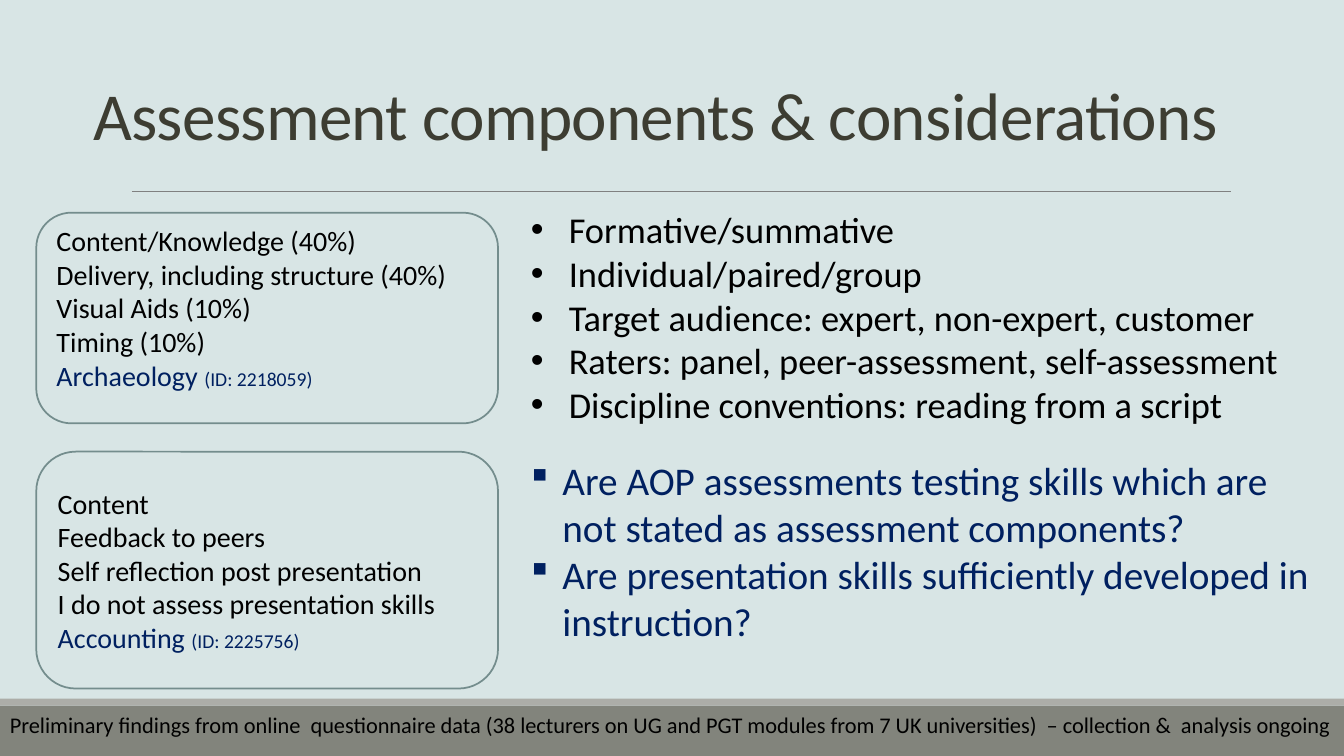
from lxml.etree import SubElement
from pptx import Presentation
from pptx.dml.color import RGBColor as RGB
from pptx.enum.shapes import MSO_CONNECTOR as LINK, MSO_SHAPE as SHAPE
from pptx.enum.text import MSO_ANCHOR as ANCHOR, PP_ALIGN as ALIGN
from pptx.oxml.ns import qn
from pptx.util import Pt

MIST = RGB(0xD8, 0xE5, 0xE5)
STONE = RGB(0x82, 0x84, 0x7C)
ASH = RGB(0xAC, 0xAD, 0xA8)
GREY = RGB(0x80, 0x80, 0x80)
TEAL = RGB(0x74, 0x8D, 0x8D)
OLIVE = RGB(0x3D, 0x3D, 0x32)
NAVY = RGB(0x00, 0x20, 0x60)
BLACK = RGB(0, 0, 0)


def write(frame, rows, form):
    for key, val in form.items():
        setattr(frame, key, val)
    paras = []
    for i, row in enumerate(rows):
        para = frame.paragraphs[0] if i == 0 else frame.add_paragraph()
        para.alignment = ALIGN.LEFT
        for text, size, color in row:
            run = para.add_run()
            run.text = text
            font = {"name": "Calibri", "size": Pt(size)}
            for key, val in font.items():
                setattr(run.font, key, val)
            run.font.color.rgb = color
        paras.append(para)
    return paras


def block(kind, *box):
    shape = slide.shapes.add_shape(kind, *map(Pt, box))
    shape.shadow.inherit = False
    return shape


deck = Presentation()
deck.slide_width, deck.slide_height = Pt(960), Pt(540)
slide = deck.slides.add_slide(deck.slide_layouts[6])
back = slide.background.fill
back.solid()
back.fore_color.rgb = MIST

for top, high, color in [(504, 36, STONE), (499, 5, ASH)]:
    band = block(SHAPE.RECTANGLE, 0, top, 960, high)
    band.fill.solid()
    band.fill.fore_color.rgb = color
    band.line.fill.background()

rule = slide.shapes.add_connector(LINK.STRAIGHT, Pt(94.3), Pt(136.6), Pt(879), Pt(136.6))
rule.line.color.rgb = GREY
rule.line.width = Pt(0.5)
SubElement(rule._element.spPr, qn("a:effectLst"))

title = slide.shapes.add_textbox(Pt(5.8), Pt(-25.2), Pt(924.5), Pt(139))
form = {"word_wrap": True, "vertical_anchor": ANCHOR.BOTTOM}
head = write(title.text_frame, [[("Assessment components & considerations", 48, OLIVE)]], form)[0]
head.alignment = ALIGN.CENTER
head.line_spacing = 0.85
head.runs[0]._r.get_or_add_rPr().set("spc", "-50")

cards = [
    (322.6, 169.2, 3.6, "Accounting ", "(ID: 2225756)",
     ["Content", "Feedback to peers", "Self reflection post presentation",
      "I do not assess presentation skills"]),
    (151.9, 150.5, 18.2, "Archaeology ", "(ID: 2218059)",
     ["Content/Knowledge (40%)", "Delivery, including structure (40%)",
      "Visual Aids (10%)", "Timing (10%)"]),
]
for top, high, inset, field, code, parts in cards:
    card = block(SHAPE.ROUNDED_RECTANGLE, 25.9, top, 329.8, high)
    card.fill.background()
    card.line.color.rgb = TEAL
    card.line.width = Pt(1.25)
    rows = [[(part, 20, BLACK)] for part in parts]
    rows.append([(field, 20, NAVY), (code, 14, NAVY)])
    form = {"word_wrap": True, "vertical_anchor": ANCHOR.MIDDLE, "margin_bottom": Pt(inset)}
    write(card.text_frame, rows, form)

note = slide.shapes.add_textbox(0, Pt(504.7), Pt(977), Pt(26.6))
write(note.text_frame, [[(
    "Preliminary findings from online  questionnaire data (38 lecturers on UG and PGT "
    "modules from 7 UK universities)  – collection &  analysis ongoing", 16, BLACK)]],
    {"word_wrap": True})

points = [
    "Formative/summative",
    "Individual/paired/group",
    "Target audience: expert, non-expert, customer",
    "Raters: panel, peer-assessment, self-assessment",
    "Discipline conventions: reading from a script",
]
asks = [
    "Are AOP assessments testing skills which are not stated as assessment components?",
    "Are presentation skills sufficiently developed in instruction?",
]
body = slide.shapes.add_textbox(Pt(372.2), Pt(144.7), Pt(573), Pt(344))
rows = [[(text, 26, BLACK)] for text in points] + [[(text, 28, NAVY)] for text in asks]
paras = write(body.text_frame, rows, {"word_wrap": True})
for i, para in enumerate(paras):
    mark, face, dent = ("•", "Arial", 27) if i < len(points) else ("▪", "Wingdings", 22.5)
    if face == "Wingdings":
        mark = "§"
    props = para._p.get_or_add_pPr()
    props.set("marL", str(Pt(dent)))
    props.set("indent", str(-Pt(dent)))
    SubElement(props, qn("a:buFont")).set("typeface", face)
    SubElement(props, qn("a:buChar")).set("char", mark)
paras[len(points)].space_before = Pt(22)

deck.save("out.pptx")
